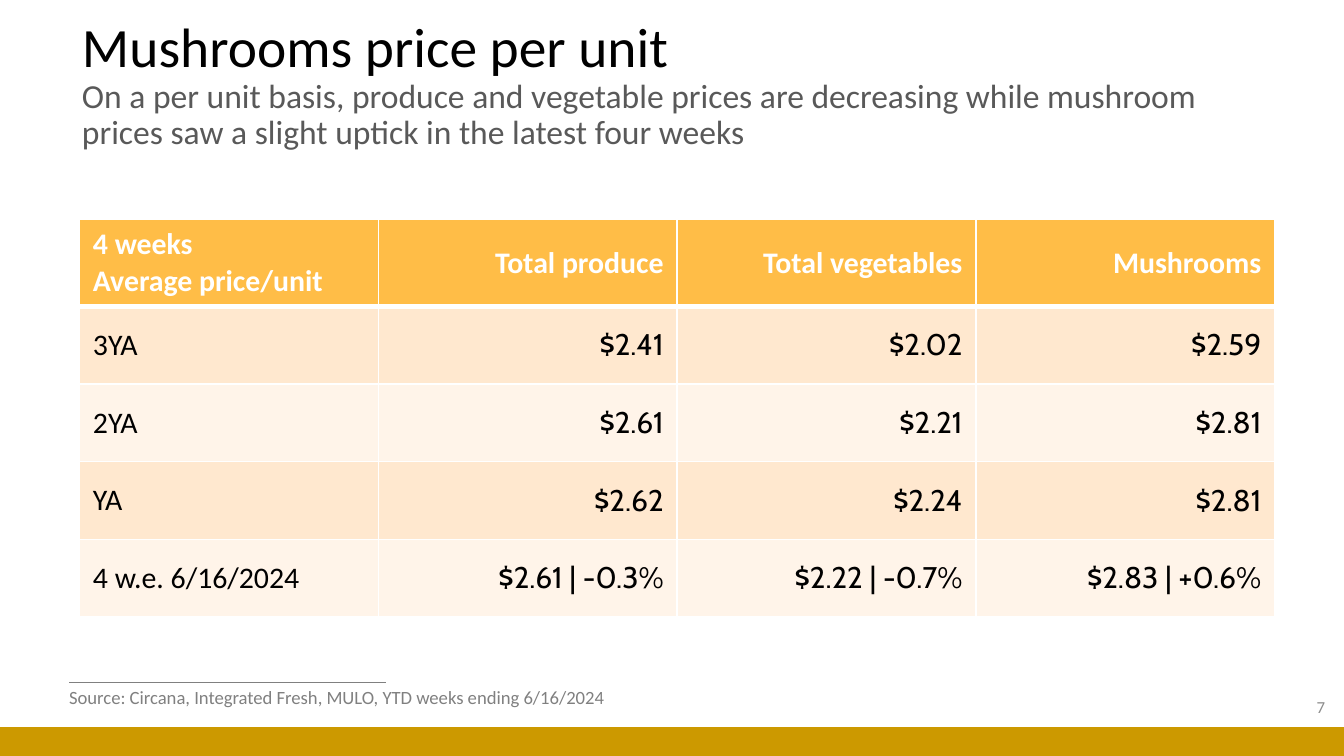
from lxml.etree import SubElement
from pptx import Presentation
from pptx.dml.color import RGBColor
from pptx.enum.shapes import MSO_CONNECTOR as CONN, MSO_SHAPE as SHAPE
from pptx.enum.text import MSO_ANCHOR as ANCHOR, MSO_AUTO_SIZE as AUTO, PP_ALIGN as ALIGN
from pptx.oxml.ns import qn
from pptx.util import Pt

COLORS = {
    "text": "000000", "subtitle": "595959", "muted": "808080", "number": "8C8C8C",
    "white": "FFFFFF", "footer": "CC9900", "header": "FFBD47",
    "band_dark": "FFE8CF", "band_light": "FFF4E9",
}
WIDTH, HEIGHT = 720, 405
PRICES = [
    ["4 weeks\vAverage price/unit", "Total produce", "Total vegetables", "Mushrooms"],
    ["3YA", "$2.41", "$2.02", "$2.59"],
    ["2YA", "$2.61", "$2.21", "$2.81"],
    ["YA", "$2.62", "$2.24", "$2.81"],
    ["4 w.e. 6/16/2024", "$2.61 | -0.3%", "$2.22 | -0.7%", "$2.83 | +0.6%"],
]


def rgb(name):
    return RGBColor.from_string(COLORS[name])


class SlideBuilder:
    label_font = "Calibri"
    value_font = "Cabin"

    def __init__(self, slide):
        self.s = slide

    def style(self, font, size, color, name=None, bold=False):
        font.name = name or self.label_font
        font.size = Pt(size)
        font.bold = bold
        font.color.rgb = rgb(color)

    def title(self, x, y, w, h, heading, subtitle):
        sp = self.s.shapes.title
        sp.left, sp.top, sp.width, sp.height = Pt(x), Pt(y), Pt(w), Pt(h)
        tf = sp.text_frame
        tf.word_wrap = True
        tf.auto_size = AUTO.NONE
        tf.vertical_anchor = ANCHOR.MIDDLE
        p = tf.paragraphs[0]
        p.alignment = ALIGN.LEFT
        p.line_spacing = 0.9
        r = p.add_run()
        r.text = heading
        self.style(r.font, 29.7, "text")
        p.add_line_break()
        r = p.add_run()
        r.text = subtitle
        self.style(r.font, 18, "subtitle")

    def text(self, x, y, w, h, text, size, color, align=ALIGN.LEFT,
             anchor=ANCHOR.TOP, wrap=True):
        tf = self.s.shapes.add_textbox(Pt(x), Pt(y), Pt(w), Pt(h)).text_frame
        tf.word_wrap = wrap
        tf.vertical_anchor = anchor
        p = tf.paragraphs[0]
        p.text = text
        p.alignment = align
        self.style(p.font, size, color)

    def bar(self, x, y, w, h, color):
        sp = self.s.shapes.add_shape(SHAPE.RECTANGLE, Pt(x), Pt(y), Pt(w), Pt(h))
        sp.shadow.inherit = False
        sp.fill.solid()
        sp.fill.fore_color.rgb = rgb(color)
        sp.line.fill.background()

    def rule(self, x, y, w, color, weight):
        line = self.s.shapes.add_connector(CONN.STRAIGHT, Pt(x), Pt(y), Pt(x + w), Pt(y))
        line.line.color.rgb = rgb(color)
        line.line.width = Pt(weight)
        SubElement(line._element.spPr, qn("a:effectLst"))

    def borders(self, cell, top, bottom):
        tc_pr = cell._tc.get_or_add_tcPr()
        for side, weight in (("L", 1), ("R", 1), ("T", top), ("B", bottom)):
            ln = SubElement(tc_pr, qn(f"a:ln{side}"), w=str(Pt(weight)))
            fill = SubElement(ln, qn("a:solidFill"))
            SubElement(fill, qn("a:srgbClr"), val=COLORS["white"])

    def table(self, x, y, col_w, header_h, row_h, rows):
        n_rows, n_cols = len(rows), len(rows[0])
        table = self.s.shapes.add_table(
            n_rows, n_cols, Pt(x), Pt(y), Pt(col_w * n_cols),
            Pt(header_h + row_h * (n_rows - 1))).table
        for col in table.columns:
            col.width = Pt(col_w)
        for i, row in enumerate(rows):
            table.rows[i].height = Pt(row_h if i else header_h)
            band = "header" if i == 0 else "band_dark" if i % 2 else "band_light"
            for j, text in enumerate(row):
                cell = table.cell(i, j)
                self.borders(cell, 3 if i == 1 else 1, 3 if i == 0 else 1)
                cell.fill.solid()
                cell.fill.fore_color.rgb = rgb(band)
                cell.vertical_anchor = ANCHOR.MIDDLE
                p = cell.text_frame.paragraphs[0]
                p.text = text
                p.alignment = ALIGN.RIGHT if j else ALIGN.LEFT
                self.style(p.font, 16, "text" if i else "white",
                           self.value_font if i and j else self.label_font, i == 0)


def main():
    prs = Presentation()
    prs.slide_width, prs.slide_height = Pt(WIDTH), Pt(HEIGHT)
    b = SlideBuilder(prs.slides.add_slide(prs.slide_layouts[5]))
    b.rule(37, 365.6, 170, "muted", 0.5)
    b.bar(0, 389.5, WIDTH, HEIGHT - 389.5, "footer")
    b.title(36.7, 26.6, 652.3, 38.9, "Mushrooms price per unit",
            "On a per unit basis, produce and vegetable prices are decreasing "
            "while mushroom prices saw a slight uptick in the latest four weeks")
    b.text(555, 368, 162, 21.6, "7", 9, "number", ALIGN.RIGHT, ANCHOR.MIDDLE)
    b.text(30, 363.8, 310, 19.4,
           "Source: Circana, Integrated Fresh, MULO, YTD weeks ending 6/16/2024",
           10, "muted", wrap=False)
    b.table(42.6, 117.6, 160.1, 46.6, 41.6, PRICES)
    prs.save("out.pptx")


if __name__ == "__main__":
    main()
